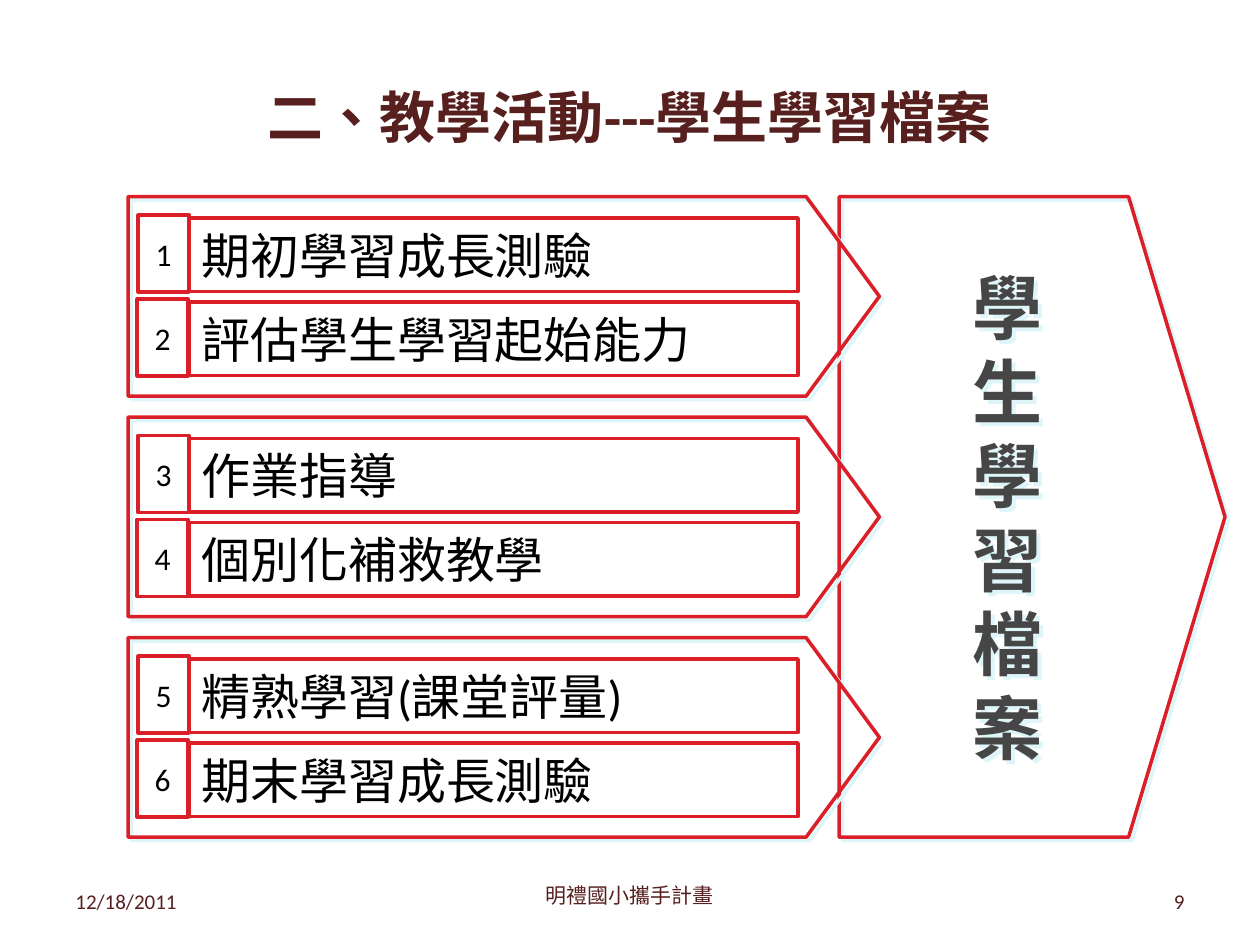
import pptx
import pptx.dml.color
import pptx.enum.lang
import pptx.enum.shapes
import pptx.enum.text
import pptx.oxml
import pptx.oxml.ns
import pptx.util
from dataclasses import dataclass
from lxml import etree

Pt = pptx.util.Pt
SHAPES = pptx.enum.shapes.MSO_SHAPE
ALIGN = pptx.enum.text.PP_ALIGN
ANCHOR = pptx.enum.text.MSO_ANCHOR
CHINESE = pptx.enum.lang.MSO_LANGUAGE_ID.TRADITIONAL_CHINESE


@dataclass(frozen=True)
class Theme:
    font: str = "Calibri"
    heading: str = "57201F"
    outline: str = "DA1F28"
    shadow: str = "DEF5FA"
    result: str = "464646"
    body: str = "000000"
    title_size: int = 32
    result_size: int = 40
    step_size: int = 28
    number_size: int = 18
    footer_size: int = 12
    line_width: int = 2


class SlideBuilder:
    def __init__(self, page, theme):
        self.page = page
        self.theme = theme

    def add_text(self, box, lines, size, color, align, anchor=ANCHOR.MIDDLE, bold=False):
        frame = box.text_frame
        frame.word_wrap = True
        frame.vertical_anchor = anchor
        for index, line in enumerate(lines):
            para = frame.paragraphs[0] if index == 0 else frame.add_paragraph()
            para.alignment = align
            span = para.add_run()
            span.text = line
            span.font.size = Pt(size)
            span.font.bold = bold
            span.font.color.rgb = pptx.dml.color.RGBColor.from_string(color)
            span.font.name = self.theme.font
            span.font.language_id = CHINESE
            # East Asian text uses the same typeface
            east = etree.SubElement(span.font._element, pptx.oxml.ns.qn("a:ea"))
            east.set("typeface", self.theme.font)

    def label(self, area, text, size, align, anchor=ANCHOR.MIDDLE, bold=False):
        box = self.page.shapes.add_textbox(*map(Pt, area))
        self.add_text(box, [text], size, self.theme.heading, align, anchor, bold)

    def outline(self, kind, area):
        box = self.page.shapes.add_shape(kind, *map(Pt, area))
        box.shadow.inherit = False
        box.fill.background()
        box.line.color.rgb = pptx.dml.color.RGBColor.from_string(self.theme.outline)
        box.line.width = Pt(self.theme.line_width)
        return box

    def arrow(self, area, point):
        box = self.outline(SHAPES.PENTAGON, area)
        box.adjustments[0] = point
        effects = box._element.spPr.find(pptx.oxml.ns.qn("a:effectLst"))
        effects.append(pptx.oxml.parse_xml(
            f'<a:outerShdw {pptx.oxml.ns.nsdecls("a")} blurRad="0" dist="{Pt(2.8)}" '
            f'dir="2700000" algn="tl" rotWithShape="0">'
            f'<a:srgbClr val="{self.theme.shadow}"/></a:outerShdw>'))
        return box

    def cell(self, area, text, size, align):
        box = self.outline(SHAPES.RECTANGLE, area)
        self.add_text(box, [text], size, self.theme.body, align)


def main():
    theme = Theme()
    deck = pptx.Presentation()
    deck.slide_width, deck.slide_height = Pt(720), Pt(540)
    page = deck.slides.add_slide(deck.slide_layouts[6])
    builder = SlideBuilder(page, theme)

    # Title
    builder.label((36, 21.6, 648, 90), "二、教學活動---學生學習檔案",
                  theme.title_size, ALIGN.CENTER, bold=True)

    # Result arrow, one character a line
    top = 112.4
    result = builder.arrow((479.5, top, 220.5, 366), 0.25)
    builder.add_text(result, "學生學習檔案", theme.result_size, theme.result,
                     ALIGN.CENTER, bold=True)

    # Three stages with two numbered steps each
    stages = [
        ("期初學習成長測驗", "評估學生學習起始能力"),
        ("作業指導", "個別化補救教學"),
        ("精熟學習(課堂評量)", "期末學習成長測驗"),
    ]
    stage_pitch, step_pitch = 126, 48
    for stage, steps in enumerate(stages):
        stage_top = top + stage * stage_pitch
        builder.arrow((73.2, stage_top, 429.3, 114), 0.367)
        for row, step in enumerate(steps):
            step_top = stage_top + 12.2 + row * step_pitch
            number = stage * len(steps) + row + 1
            builder.cell((108, step_top, 348, 42), step, theme.step_size, ALIGN.LEFT)
            builder.cell((79 - row * 0.6, step_top - 1.7, 29, 44), str(number),
                         theme.number_size, ALIGN.CENTER)

    # Footer
    footer_top, footer_height = 500.5, 28.75
    builder.label((36, footer_top, 168, footer_height), "12/18/2011",
                  theme.footer_size, ALIGN.LEFT)
    builder.label((246, footer_top, 228, footer_height), "明禮國小攜手計畫",
                  theme.footer_size, ALIGN.CENTER, ANCHOR.TOP)
    builder.label((516, footer_top, 168, footer_height), "9",
                  theme.footer_size, ALIGN.RIGHT)

    deck.save("out.pptx")


if __name__ == "__main__":
    main()
